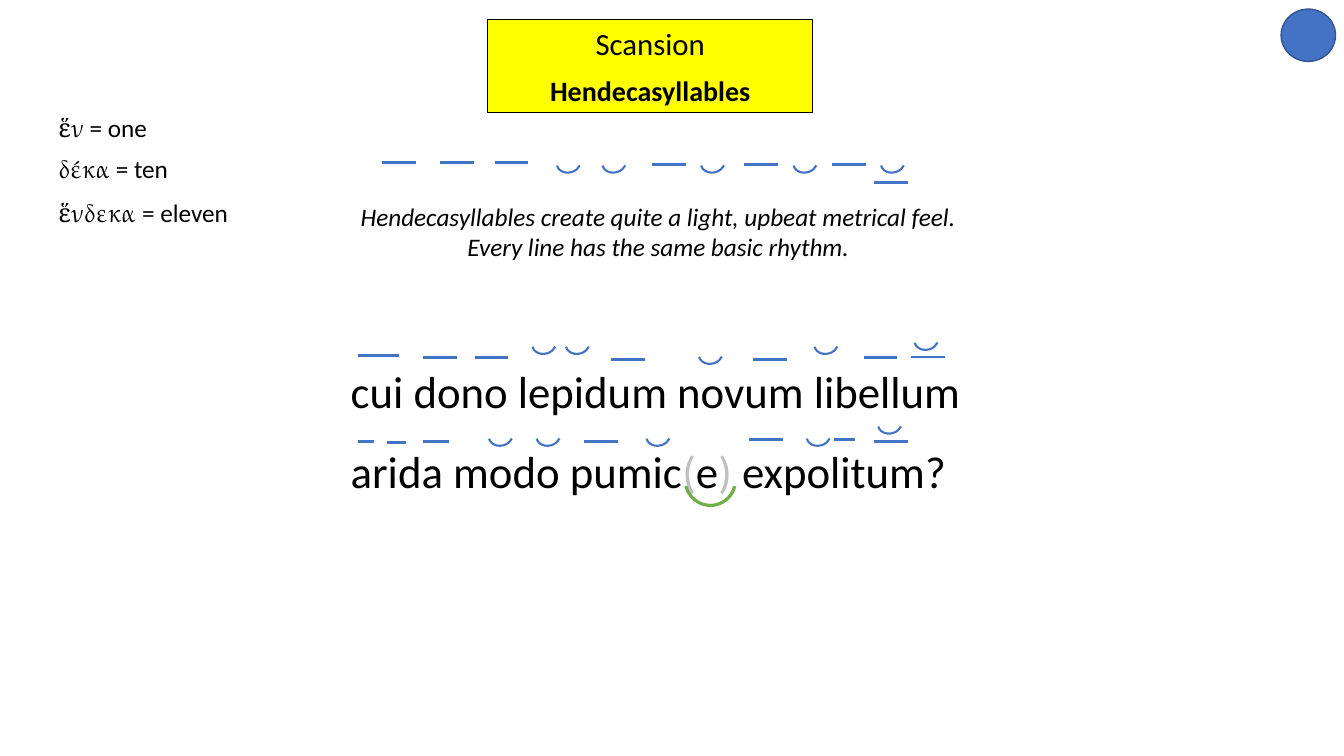
"""Build a slide that scans two hendecasyllabic lines."""
from dataclasses import dataclass

from pptx import Presentation
from pptx import util as u
from pptx.dml.color import RGBColor
from pptx.enum import shapes, text
from pptx.oxml.ns import qn
from pptx.oxml.xmlchemy import OxmlElement


@dataclass(frozen=True)
class Theme:
    """Colours, fonts and type sizes of the slide."""
    ink: str = "000000"
    blue: str = "4472C4"
    dark_blue: str = "325491"
    green: str = "70AD47"
    grey: str = "BFBFBF"
    yellow: str = "FFFF00"
    body_font: str = "Calibri"
    greek_font: str = "TeX Gyre Pagella"
    title: int = 22
    subtitle: int = 20
    note: int = 18
    verse: int = 32


class ScansionSlide:
    """Draw text and metrical marks on one slide in one theme."""

    def __init__(self, presentation, theme):
        self.theme = theme
        self.slide = presentation.slides.add_slide(presentation.slide_layouts[6])

    def style_run(self, run, size, color=None, font=None, bold=False, italic=False):
        run.font.size = u.Pt(size)
        run.font.name = font or self.theme.body_font
        run.font.color.rgb = RGBColor.from_string(color or self.theme.ink)
        run.font.bold = bold
        run.font.italic = italic

    def shape(self, preset, box, line, width, fill=None):
        shape = self.slide.shapes.add_shape(preset, *map(u.Pt, box))
        shape.shadow.inherit = False
        if fill:
            shape.fill.solid()
            shape.fill.fore_color.rgb = RGBColor.from_string(fill)
        else:
            shape.fill.background()
        shape.line.color.rgb = RGBColor.from_string(line)
        shape.line.width = u.Pt(width)
        return shape

    def title_box(self, box, title, subtitle):
        shape = self.shape(shapes.MSO_SHAPE.RECTANGLE, box, self.theme.ink, 0.75, self.theme.yellow)
        frame = shape.text_frame
        frame.text = f"{title}\n{subtitle}"
        for paragraph in frame.paragraphs:
            paragraph.alignment = text.PP_ALIGN.CENTER
        heading, subheading = frame.paragraphs
        subheading.space_before = u.Pt(8.5)
        self.style_run(heading.runs[0], self.theme.title)
        self.style_run(subheading.runs[0], self.theme.subtitle, bold=True)

    def text_box(self, box, lines, size, align=text.PP_ALIGN.LEFT, spacing=1, italic=False):
        frame = self.slide.shapes.add_textbox(*map(u.Pt, box)).text_frame
        frame.word_wrap = True
        for index, pieces in enumerate(lines):
            paragraph = frame.add_paragraph() if index else frame.paragraphs[0]
            paragraph.alignment = align
            paragraph.line_spacing = spacing
            for words, color, font in pieces:
                run = paragraph.add_run()
                run.text = words
                self.style_run(run, size, color, font, italic=italic)

    def macron(self, x, y, length=24):
        line = self.slide.shapes.add_connector(
            shapes.MSO_CONNECTOR.STRAIGHT, u.Pt(x), u.Pt(y), u.Pt(x + length), u.Pt(y))
        line.line.color.rgb = RGBColor.from_string(self.theme.blue)
        line.line.width = u.Pt(2)
        line._element.spPr.append(OxmlElement("a:effectLst"))

    def arc(self, box, color, width):
        shape = self.shape(shapes.MSO_SHAPE.ARC, box, color, width)
        shape.adjustments[0] = 162
        shape.adjustments[1] = 36.07
        shape.rotation = 255.1
        shape._element.spPr.find(qn("a:xfrm")).set("flipH", "1")

    def breve(self, x, y):
        self.arc((x, y, 14.4, 17.3), self.theme.blue, 1.5)


MACRONS = [
    (273, 116), (314.5, 116), (353.5, 116), (466, 117.5), (531.5, 117.5),
    (594.5, 117.5), (624.5, 130.5),
    (255.5, 254, 29.5), (302.5, 255.5), (339, 255.5), (436.5, 257), (538, 257),
    (617, 255.5), (651, 255),
    (255.5, 315.5, 11.5), (276.5, 316, 13.5), (302.5, 315.5, 18.5),
    (417.5, 315.5), (535, 314), (595.5, 314, 15), (624.5, 315.5),
]
BREVES = [
    (399, 107.4), (431.5, 107.4), (502, 107.4), (568, 107.4), (630.5, 107.4),
    (381.5, 236.9), (405.5, 236.9), (500.5, 244), (583, 236.9), (654.5, 234),
    (350.5, 302.5), (384.5, 302.5), (463, 302.5), (577.5, 302.5), (628.5, 293.8),
]
GREEK_NUMBERS = [
    (77, 90.7, "ἕν", " = one"),
    (105.8, 105.8, "δέκα", " = ten"),
    (137.5, 139, "ἕνδεκα ", "= eleven"),
]


def main():
    theme = Theme()
    presentation = Presentation()
    presentation.slide_width = u.Pt(960)
    presentation.slide_height = u.Pt(540)
    page = ScansionSlide(presentation, theme)

    page.title_box((348.5, 13.7, 232, 67), "Scansion", "Hendecasyllables")
    verses = [
        [("cui dono lepidum novum libellum", theme.ink, theme.body_font)],
        [(words, color, theme.body_font) for words, color in (
            ("arida modo pumic", theme.ink), ("(", theme.grey), ("e", theme.ink),
            (") ", theme.grey), ("expolitum?", theme.ink))],
    ]
    page.text_box((243.4, 236.9, 529.2, 117.4), verses, theme.verse, spacing=1.5)
    for mark in MACRONS:
        page.macron(*mark)
    for mark in BREVES:
        page.breve(*mark)
    page.arc((489, 324.7, 36.7, 36), theme.green, 2.25)

    for top, width, greek, meaning in GREEK_NUMBERS:
        pieces = [(greek, theme.ink, theme.greek_font), (meaning, theme.ink, theme.body_font)]
        page.text_box((34.6, top, width, 28.8), [pieces], theme.note)
    page.shape(shapes.MSO_SHAPE.OVAL, (915.1, 6.5, 38.9, 37.4), theme.dark_blue, 1, theme.blue)
    remark = ("Hendecasyllables create quite a light, upbeat metrical feel. "
              "Every line has the same basic rhythm.")
    page.text_box((243.4, 140.4, 453.6, 51), [[(remark, theme.ink, theme.body_font)]],
                  theme.note, text.PP_ALIGN.CENTER, italic=True)
    presentation.save("out.pptx")


if __name__ == "__main__":
    main()
